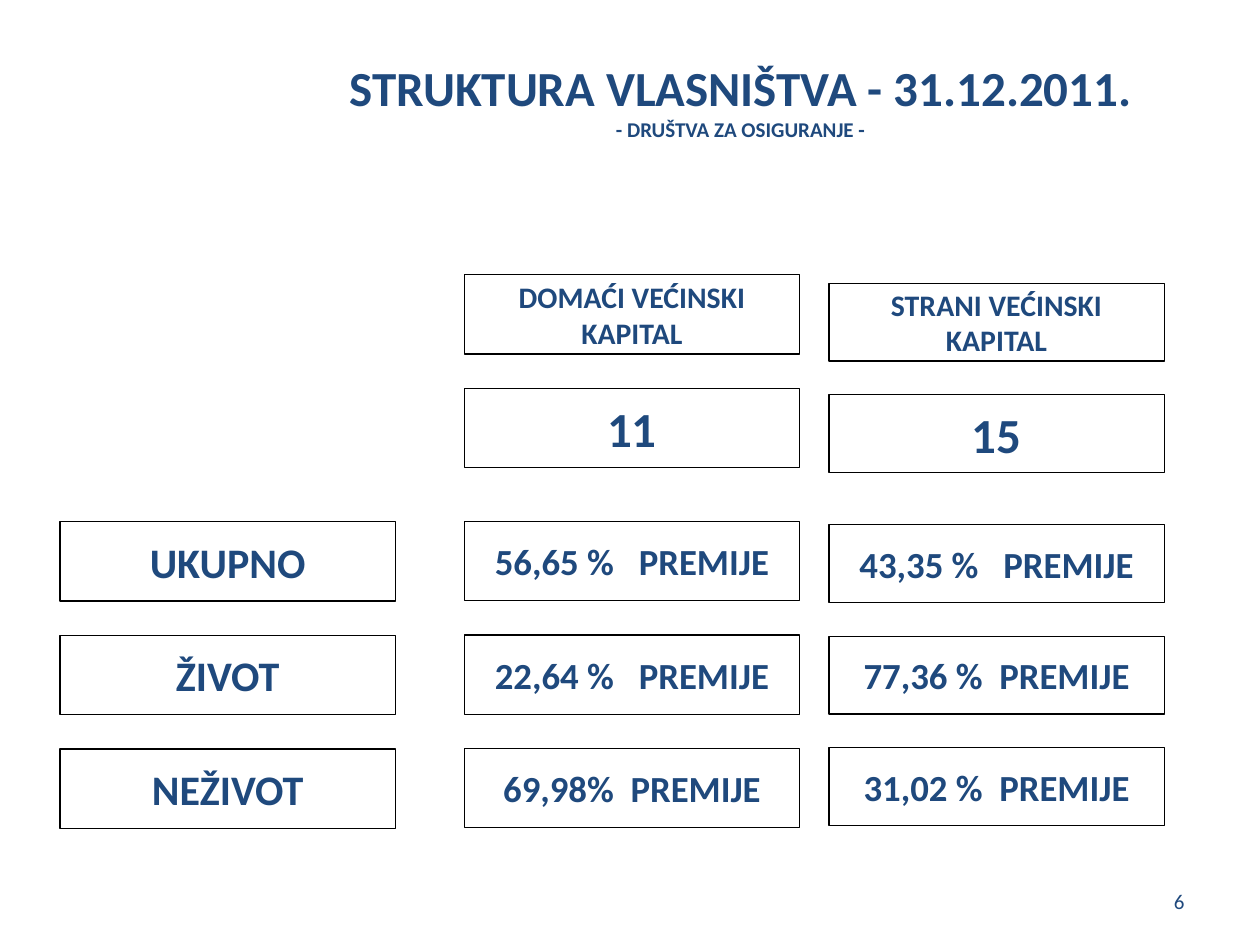
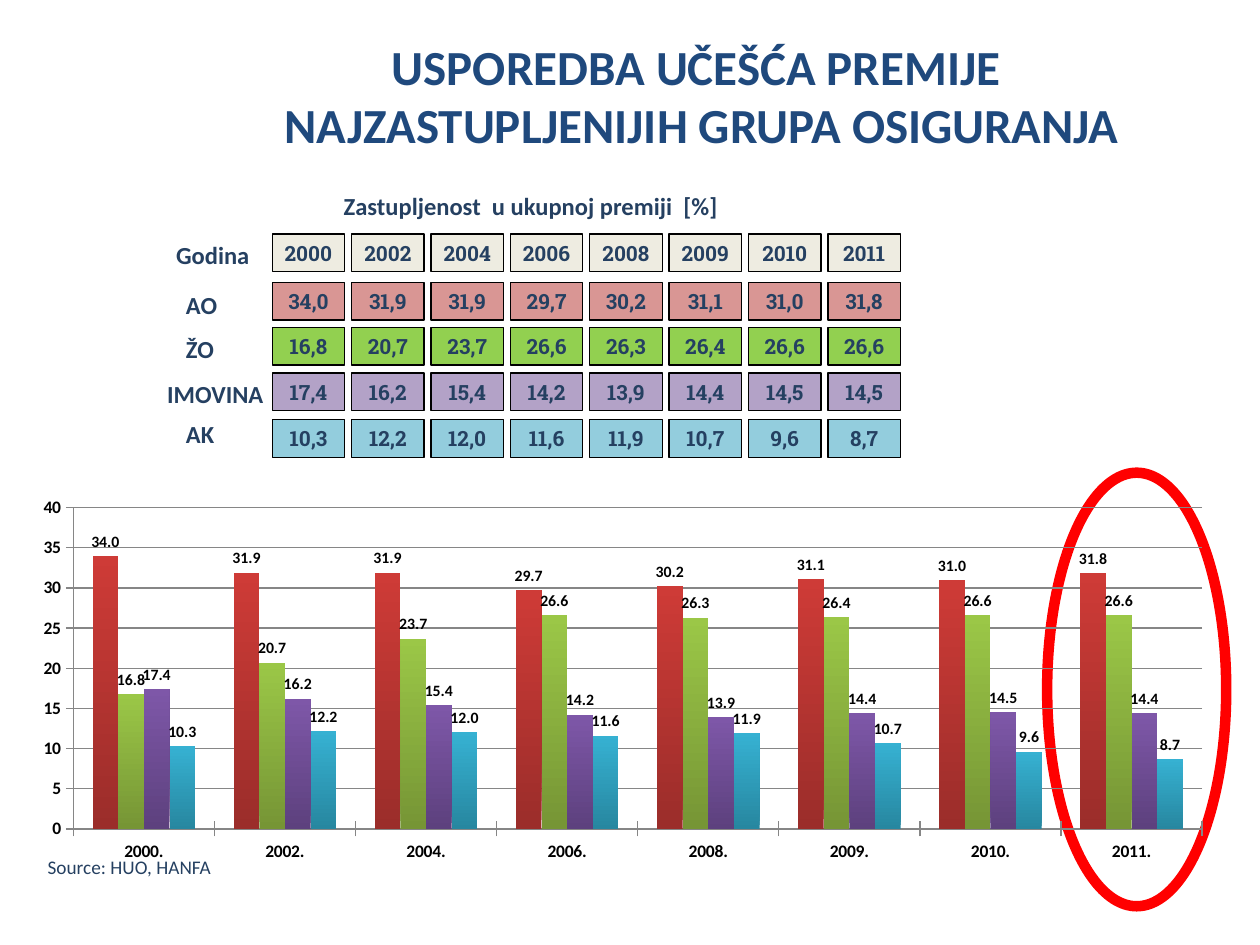
from lxml import etree
from pptx import Presentation
from pptx.chart.data import CategoryChartData
from pptx.dml.color import RGBColor
from pptx.enum.chart import XL_CHART_TYPE, XL_LABEL_POSITION, XL_TICK_MARK
from pptx.enum.shapes import MSO_SHAPE
from pptx.enum.text import MSO_ANCHOR, PP_ALIGN
from pptx.oxml import parse_xml
from pptx.oxml.ns import nsdecls
from pptx.util import Cm, Pt

RECTANGLE, OVAL = MSO_SHAPE.RECTANGLE, MSO_SHAPE.OVAL
TOP, MIDDLE = MSO_ANCHOR.TOP, MSO_ANCHOR.MIDDLE
LEFT, CENTER, RIGHT = PP_ALIGN.LEFT, PP_ALIGN.CENTER, PP_ALIGN.RIGHT
CLUSTERED = XL_CHART_TYPE.COLUMN_CLUSTERED
OUTSIDE_END = XL_LABEL_POSITION.OUTSIDE_END
CROSS, NO_TICK = XL_TICK_MARK.CROSS, XL_TICK_MARK.NONE

COLORS = {
    "title": "1F497D",
    "label": "254061",
    "black": "000000",
    "grid": "868686",
    "year": "EEECE1",
    "highlight": "FF0000",
    "AO": "D99694",
    "ŽO": "92D050",
    "IMOVINA": "B3A2C7",
    "AK": "93CDDD",
}
# Bottom and top of each column's gradient
BAR_GRADIENTS = {
    "AO": ("9B2D2A", "CE3B37"),
    "ŽO": ("769535", "9BC747"),
    "IMOVINA": ("5D417E", "7E57A8"),
    "AK": ("2787A0", "36B1D2"),
}
BODY_FONT, CELL_FONT = "Calibri", "Roboto Slab"
SPACE_EM = 0.226  # width of one space in the body font

YEARS = (2000, 2002, 2004, 2006, 2008, 2009, 2010, 2011)
SHARES = {
    "AO": (34.0, 31.9, 31.9, 29.7, 30.2, 31.1, 31.0, 31.8),
    "ŽO": (16.8, 20.7, 23.7, 26.6, 26.3, 26.4, 26.6, 26.6),
    "IMOVINA": (17.4, 16.2, 15.4, 14.2, 13.9, 14.4, 14.5, 14.5),
    "AK": (10.3, 12.2, 12.0, 11.6, 11.9, 10.7, 9.6, 8.7),
}
CHART_SHARES = {**SHARES, "IMOVINA": SHARES["IMOVINA"][:-1] + (14.4,)}


def rgb(name):
    return RGBColor.from_string(COLORS.get(name, name))


def add_span(para, text, size, color, bold=True, font=BODY_FONT):
    span = para.add_run()
    span.text = text
    span.font.name = font
    span.font.size = Pt(size)
    span.font.bold = bold
    span.font.color.rgb = rgb(color)
    return span


def add_spaced_spans(para, parts, spaces, size, color):
    """Join the parts with a gap as wide as the given number of spaces."""
    for index, part in enumerate(parts):
        if index:
            gap = add_span(para, " ", size, color)
            extra = (spaces - 1) * SPACE_EM * size
            gap.font._element.set("spc", str(round(extra * 100)))
        add_span(para, part, size, color)


def add_text_box(page, left, top, width, height, align=LEFT, anchor=TOP, wrap=True):
    """Add an empty text box and return its first paragraph."""
    frame = page.shapes.add_textbox(Cm(left), Cm(top), Cm(width), Cm(height)).text_frame
    frame.word_wrap = wrap
    frame.vertical_anchor = anchor
    para = frame.paragraphs[0]
    para.alignment = align
    return para


def add_title(page, left, top, width, height, lines):
    """Add a centred title; lines holds pairs of text and size."""
    para = add_text_box(page, left, top, width, height, CENTER, MIDDLE)
    for index, (text, size) in enumerate(lines):
        if index:
            para.add_line_break()
        add_span(para, text, size, "title")


def add_outlined(page, kind, left, top, width, height, line="black", weight=0.75, fill=None):
    box = page.shapes.add_shape(kind, Cm(left), Cm(top), Cm(width), Cm(height))
    box.shadow.inherit = False
    box.line.color.rgb = rgb(line)
    box.line.width = Pt(weight)
    if fill:
        box.fill.solid()
        box.fill.fore_color.rgb = rgb(fill)
    else:
        box.fill.background()
    return box


def add_cell(page, left, top, width, height, wrap=False, fill=None):
    """Add an outlined rectangle and return its centred paragraph."""
    frame = add_outlined(page, RECTANGLE, left, top, width, height, fill=fill).text_frame
    frame.word_wrap = wrap
    frame.vertical_anchor = MIDDLE
    para = frame.paragraphs[0]
    para.alignment = CENTER
    return para


def add_ownership_column(page, left, top, cells, scale=1, first_row=0):
    """Stack cells of (parts, spaces between parts, size) on the shared rows."""
    row_offsets = (0, 2.29, 4.97, 7.26, 9.55)
    for offset, (parts, spaces, size) in zip(row_offsets[first_row:], cells):
        para = add_cell(page, left, top + offset * scale, 6.76, 1.6 * scale, wrap=size == 17)
        add_spaced_spans(para, parts, spaces, size, "title")


def add_share_grid(page, left, top):
    """Place row labels and the grid of yearly shares."""
    label_places = ((-2.19, 0), (-1.99, 1), (-1.99, 1.88), (-2.37, 2.8), (-1.99, 3.61))
    row_tops = (0, 0.97, 1.88, 2.8, 3.74)
    rows = [("Godina", "year", [str(year) for year in YEARS])]
    for name, values in SHARES.items():
        rows.append((name, name, [f"{value:.1f}".replace(".", ",") for value in values]))
    for (x, y), row_top, (label, fill, texts) in zip(label_places, row_tops, rows):
        para = add_text_box(page, left + x, top + y, 2.46, 0.86, wrap=False)
        add_span(para, label, 14, "label")
        for column, text in enumerate(texts):
            cell = add_cell(page, left + 1.6 * column, top + row_top, 1.46, 0.76, fill=fill)
            add_span(cell, text, 12, "label", font=CELL_FONT)


def style_font(font, size):
    font.name = BODY_FONT
    font.size = Pt(size)
    font.bold = True
    font.color.rgb = rgb("black")


def set_plot_area(chart, x, y, width, height):
    """Fix the inner plot area as fractions of the chart."""
    plot_area = chart._chartSpace.chart.plotArea
    for old in plot_area.findall("{*}layout"):
        plot_area.remove(old)
    layout = parse_xml(f"<c:layout {nsdecls('c')}><c:manualLayout/></c:layout>")
    settings = {"layoutTarget": "inner", "xMode": "edge", "yMode": "edge",
                "x": x, "y": y, "w": width, "h": height}
    namespace = etree.QName(layout).namespace
    for tag, value in settings.items():
        etree.SubElement(layout[0], f"{{{namespace}}}{tag}").set("val", str(value))
    plot_area.insert(0, layout)


def add_share_chart(page, left, top, width, height):
    data = CategoryChartData(number_format="#,##0.0")
    data.categories = [f"{year}." for year in YEARS]
    for name, values in CHART_SHARES.items():
        data.add_series(name, values)
    chart = page.shapes.add_chart(
        CLUSTERED, Cm(left), Cm(top), Cm(width), Cm(height), data).chart
    chart.has_legend = False
    chart.has_title = False
    style_font(chart.font, 10)
    set_plot_area(chart, 0.04, 0.04, 0.94, 0.85)

    for axis in (chart.category_axis, chart.value_axis):
        axis.major_tick_mark = CROSS
        axis.minor_tick_mark = NO_TICK
        axis.format.line.color.rgb = rgb("grid")
        style_font(axis.tick_labels.font, 10)
    scale = chart.value_axis
    scale.minimum_scale, scale.maximum_scale, scale.major_unit = 0, 40, 5
    scale.tick_labels.number_format = "#,##0"
    scale.tick_labels.number_format_is_linked = False
    scale.major_gridlines.format.line.color.rgb = rgb("grid")

    plot = chart.plots[0]
    plot.gap_width, plot.overlap, plot.vary_by_categories = 150, 0, False
    for series in plot.series:
        fill = series.format.fill
        fill.gradient()
        fill.gradient_angle = 90
        for stop, color in zip(fill.gradient_stops, BAR_GRADIENTS[series.name]):
            stop.color.rgb = rgb(color)
        labels = series.data_labels
        labels.show_value = True
        labels.position = OUTSIDE_END
        labels.number_format = "#,##0.0"
        labels.number_format_is_linked = False
        style_font(labels.font, 9)


def build_ownership_page(page):
    add_title(page, 3.5, 0.74, 22.86, 2.54, [
        ("STRUKTURA VLASNIŠTVA - 31.12.2011.", 28),
        ("- DRUŠTVA ZA OSIGURANJE -", 12),
    ])
    add_ownership_column(page, 9.36, 5.54, [
        (["DOMAĆI VEĆINSKI KAPITAL"], 1, 17),
        (["11"], 1, 28),
        (["56,65 %", "PREMIJE"], 3, 21),
        (["22,64 %", "PREMIJE"], 3, 21),
        (["69,98%", "PREMIJE"], 2, 21),
    ])
    add_ownership_column(page, 16.71, 5.71, [
        (["STRANI VEĆINSKI KAPITAL"], 1, 17),
        (["15"], 1, 28),
        (["43,35 %", "PREMIJE"], 3, 21),
        (["77,36 %", "PREMIJE"], 2, 21),
        (["31,02 %", "PREMIJE"], 2, 21),
    ], scale=0.98)
    groups = [([name], 1, 24) for name in ("UKUPNO", "ŽIVOT", "NEŽIVOT")]
    add_ownership_column(page, 1.21, 5.55, groups, first_row=2)
    number = add_text_box(page, 18.21, 17.65, 5.92, 1.02, RIGHT, MIDDLE)
    add_span(number, "6", 12, "title", bold=False)


def build_comparison_page(page):
    add_title(page, 3.91, 0.91, 20.47, 2.01, [
        ("USPOREDBA UČEŠĆA PREMIJE ", 28),
        ("NAJZASTUPLJENIJIH GRUPA OSIGURANJA", 28),
    ])
    heading = add_text_box(page, 6.1, 3.73, 9.19, 0.84, CENTER)
    add_spaced_spans(heading, ["Zastupljenost", "u ukupnoj premiji", "[%]"], 2, 14, "label")
    add_share_grid(page, 5.49, 4.72)
    add_outlined(page, OVAL, 21.11, 9.53, 3.61, 8.74, "highlight", 6)
    add_share_chart(page, 0.51, 9.93, 24.21, 7.62)
    source = add_text_box(page, 0.71, 17.12, 20.19, 0.74)
    add_span(source, "Source: HUO, HANFA", 11, "label", bold=False)


def main():
    deck = Presentation()
    deck.slide_width, deck.slide_height = Cm(25.4), Cm(19.05)
    blank = deck.slide_layouts[6]
    for build in (build_ownership_page, build_comparison_page):
        build(deck.slides.add_slide(blank))
    deck.save("out.pptx")


if __name__ == "__main__":
    main()
